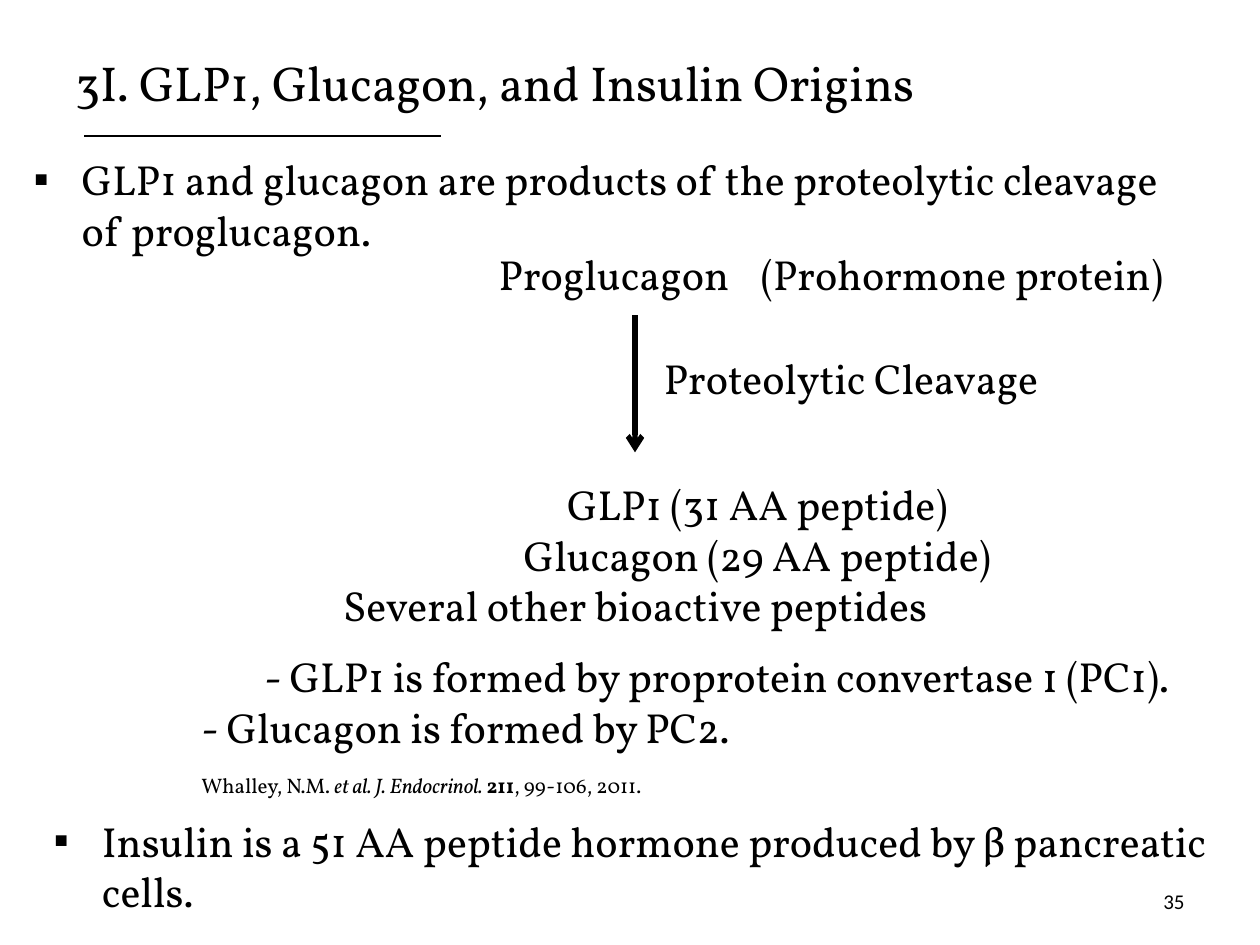
from lxml import etree
from pptx import Presentation
from pptx.dml.color import RGBColor
from pptx.enum.shapes import MSO_CONNECTOR
from pptx.enum.text import MSO_ANCHOR, PP_ALIGN
from pptx.oxml.ns import qn
from pptx.util import Inches, Pt

STRAIGHT = MSO_CONNECTOR.STRAIGHT
TOP, MIDDLE = MSO_ANCHOR.TOP, MSO_ANCHOR.MIDDLE
LEFT, CENTER, RIGHT = PP_ALIGN.LEFT, PP_ALIGN.CENTER, PP_ALIGN.RIGHT
BLACK = "000000"
SERIF, SANS = "Vollkorn", "Calibri"
BULLET_INDENT = 0.38


def set_color(color_format, hex_color):
    color_format.rgb = RGBColor.from_string(hex_color)


def add_frame(slide, left, top, width, height, anchor=TOP):
    box = slide.shapes.add_textbox(
        Inches(left), Inches(top), Inches(width), Inches(height))
    frame = box.text_frame
    frame.word_wrap = True
    frame.vertical_anchor = anchor
    return frame


def add_run(paragraph, text, size=24, font=SERIF, bold=False, italic=False):
    run = paragraph.add_run()
    run.text = text
    run.font.size = Pt(size)
    run.font.name = font
    run.font.bold = bold
    run.font.italic = italic
    set_color(run.font.color, BLACK)


def format_paragraph(paragraph, align=LEFT, margin=0, space_before=0):
    paragraph.alignment = align
    paragraph.space_before = Pt(space_before)
    properties = paragraph._p.get_or_add_pPr()
    properties.set("marL", str(Inches(margin)))
    properties.set("indent", "0")
    return properties


def add_label(slide, text, left, top, width, height, size=24, font=SERIF,
              align=LEFT, anchor=TOP):
    paragraph = add_frame(slide, left, top, width, height, anchor).paragraphs[0]
    properties = format_paragraph(paragraph, align)
    add_run(paragraph, text, size, font)
    return properties


def add_bullet(slide, text, left, top):
    properties = add_label(slide, text, left, top, 9.42, 0.91)
    properties.set("marL", str(Inches(BULLET_INDENT)))
    properties.set("indent", str(-Inches(BULLET_INDENT)))
    etree.SubElement(properties, qn("a:buFont"), typeface=SANS)
    etree.SubElement(properties, qn("a:buChar"), char="▪")


def add_line(slide, start, end, width, arrow=False):
    line = slide.shapes.add_connector(
        STRAIGHT, *(Inches(value) for value in (*start, *end)))
    set_color(line.line.color, BLACK)
    line.line.width = Pt(width)
    if arrow:
        outline = line._element.spPr.find(qn("a:ln"))
        etree.SubElement(outline, qn("a:tailEnd"), type="arrow")
    etree.SubElement(line._element.spPr, qn("a:effectLst"))


def add_products(slide):
    frame = add_frame(slide, 0.5, 3.75, 9.08, 2.69)
    products = [
        ("GLP1 (31 AA peptide)", CENTER, 1.94, 0),
        ("Glucagon (29 AA peptide)", CENTER, 1.94, 0),
        ("Several other bioactive peptides", CENTER, 0, 0),
        ("- GLP1 is formed by proprotein convertase 1 (PC1).", LEFT, 1.5, 12),
        ("- Glucagon is formed by PC2.", LEFT, 1, 0),
    ]
    for index, (text, align, margin, space_before) in enumerate(products):
        paragraph = frame.add_paragraph() if index else frame.paragraphs[0]
        format_paragraph(paragraph, align, margin, space_before)
        add_run(paragraph, text)

    citation = frame.add_paragraph()
    format_paragraph(citation, margin=1, space_before=12)
    add_run(citation, "Whalley, N.M. ", 12)
    add_run(citation, "et al. J. Endocrinol. ", 12, italic=True)
    add_run(citation, "211", 12, bold=True)
    add_run(citation, ", 99-106, 2011.", 12)


def main():
    presentation = Presentation()
    presentation.slide_width = Inches(10)
    presentation.slide_height = Inches(7.5)
    slide = presentation.slides.add_slide(presentation.slide_layouts[6])

    add_label(slide, "3I. GLP1, Glucagon, and Insulin Origins",
              0.5, 0.3, 9.25, 0.7, size=28, anchor=MIDDLE)
    add_line(slide, (0.67, 1.08), (3.5, 1.08), 1.5)
    add_label(slide, "35", 7.17, 6.95, 2.33, 0.4, size=12, font=SANS,
              align=RIGHT, anchor=MIDDLE)
    add_label(slide, "Proglucagon", 3.86, 1.92, 2.08, 0.5)
    add_label(slide, "(Prohormone protein)", 5.94, 1.92, 3.81, 0.5)
    add_products(slide)
    add_line(slide, (5.04, 2.5), (5.04, 3.59), 3, arrow=True)
    add_label(slide, "Proteolytic Cleavage", 5.17, 2.75, 4.08, 0.5)
    add_bullet(slide, "GLP1 and glucagon are products of the proteolytic "
               "cleavage of proglucagon.", 0.17, 1.17)
    add_bullet(slide, "Insulin is a 51 AA peptide hormone produced by "
               "β pancreatic cells.", 0.33, 6.42)

    presentation.save("out.pptx")


if __name__ == "__main__":
    main()
